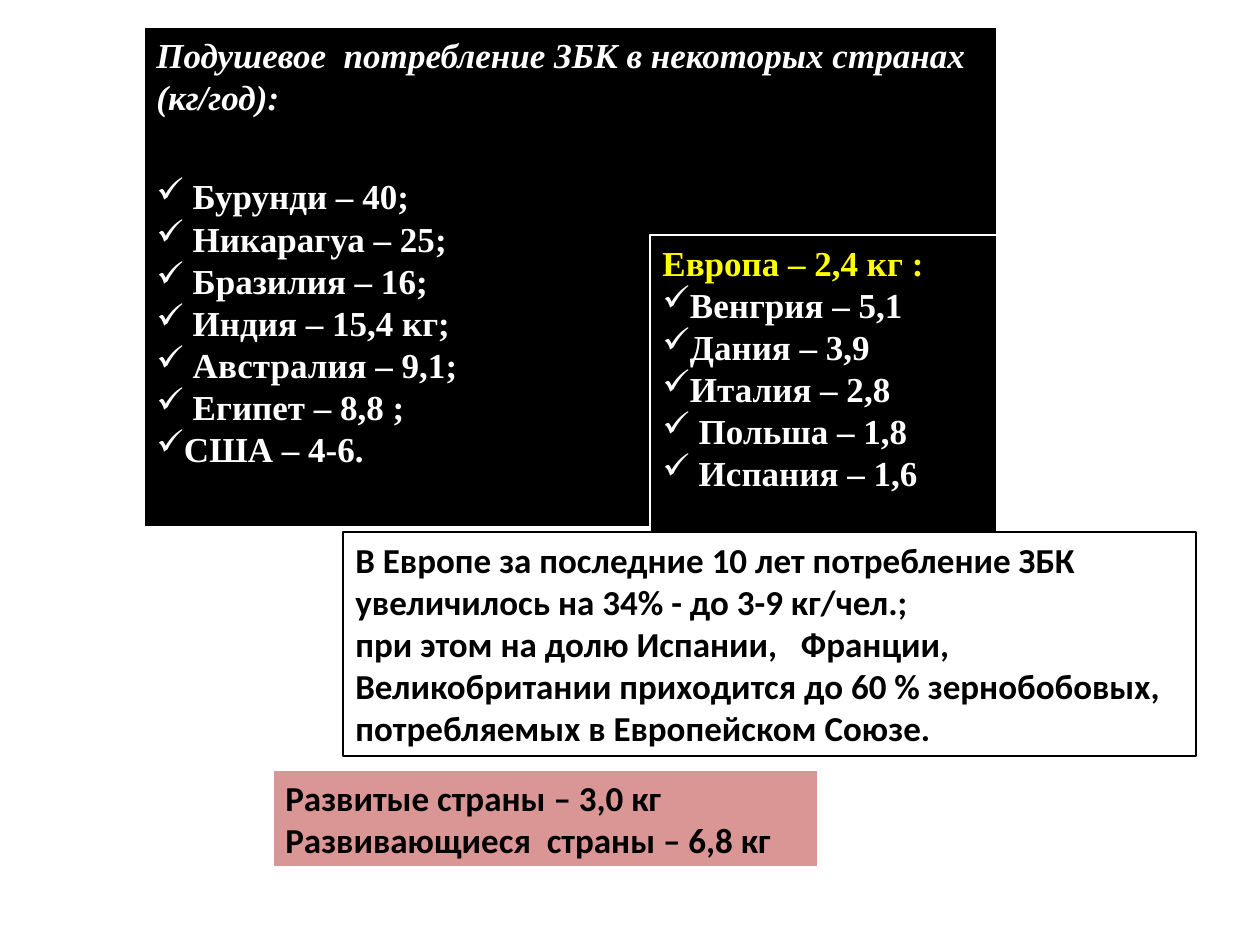
from lxml.etree import SubElement
from pptx import Presentation
from pptx.dml.color import RGBColor
from pptx.enum.shapes import MSO_SHAPE
from pptx.enum.text import MSO_ANCHOR, PP_ALIGN
from pptx.oxml.ns import qn
from pptx.util import Pt

PX = 914400 // 126
BLACK = RGBColor(0x00, 0x00, 0x00)
WHITE = RGBColor(0xFF, 0xFF, 0xFF)
YELLOW = RGBColor(0xFF, 0xFF, 0x00)
PINK = RGBColor(0xD9, 0x96, 0x94)
SERIF, SANS = "Times New Roman", "Calibri"

WORLD_TITLE = "Подушевое  потребление ЗБК в некоторых странах (кг/год):"
WORLD = [" Бурунди – 40;", " Никарагуа – 25;", " Бразилия – 16;",
         " Индия – 15,4 кг;", " Австралия – 9,1;", " Египет – 8,8 ;",
         "США – 4-6."]
EUROPE_TITLE = "Европа – 2,4 кг :"
EUROPE = ["Венгрия – 5,1", "Дания – 3,9", "Италия – 2,8",
          " Польша – 1,8", " Испания – 1,6"]
DEVELOPMENT = ["Развитые страны – 3,0 кг", "Развивающиеся  страны – 6,8 кг"]
TREND = [
    "В Европе за последние 10 лет потребление ЗБК увеличилось на 34% - до 3-9 кг/чел.;",
    "при этом на долю Испании,   Франции, Великобритании приходится до 60 % "
    "зернобобовых, потребляемых в Европейском Союзе.",
]


def add_panel(slide, box, fill, line, lines, font, color):
    """Add a filled, outlined rectangle and return its paragraphs."""
    panel = slide.shapes.add_shape(MSO_SHAPE.RECTANGLE, *(n * PX for n in box))
    panel.shadow.inherit = False
    panel.fill.solid()
    panel.fill.fore_color.rgb = fill
    panel.line.color.rgb = line
    panel.line.width = Pt(0.75)
    frame = panel.text_frame
    frame.word_wrap = True
    frame.vertical_anchor = MSO_ANCHOR.TOP
    frame.text = "\n".join(lines)
    for paragraph in frame.paragraphs:
        paragraph.alignment = PP_ALIGN.LEFT
        style = paragraph.runs[0].font
        style.name, style.size, style.bold = font, Pt(20), True
        style.color.rgb = color
    return frame.paragraphs


def add_checks(paragraphs):
    for paragraph in paragraphs:
        SubElement(paragraph._p.get_or_add_pPr(), qn("a:buChar")).set("char", "✓")


def main():
    deck = Presentation()
    deck.slide_width, deck.slide_height = 1260 * PX, 945 * PX
    slide = deck.slides.add_slide(deck.slide_layouts[6])

    title, *countries = add_panel(slide, (144, 27, 853, 500), BLACK, WHITE,
                                  [WORLD_TITLE, *WORLD], SERIF, WHITE)
    title.runs[0].font.italic = True
    title.space_after = Pt(33)
    add_checks(countries)

    title, *countries = add_panel(slide, (650, 235, 347, 310), BLACK, WHITE,
                                  [EUROPE_TITLE, *EUROPE], SERIF, WHITE)
    title.runs[0].font.color.rgb = YELLOW
    add_checks(countries)

    add_panel(slide, (273, 770, 545, 97), PINK, WHITE, DEVELOPMENT, SANS, BLACK)
    add_panel(slide, (343, 532, 853, 224), WHITE, BLACK, TREND, SANS, BLACK)

    deck.save("out.pptx")


if __name__ == "__main__":
    main()
